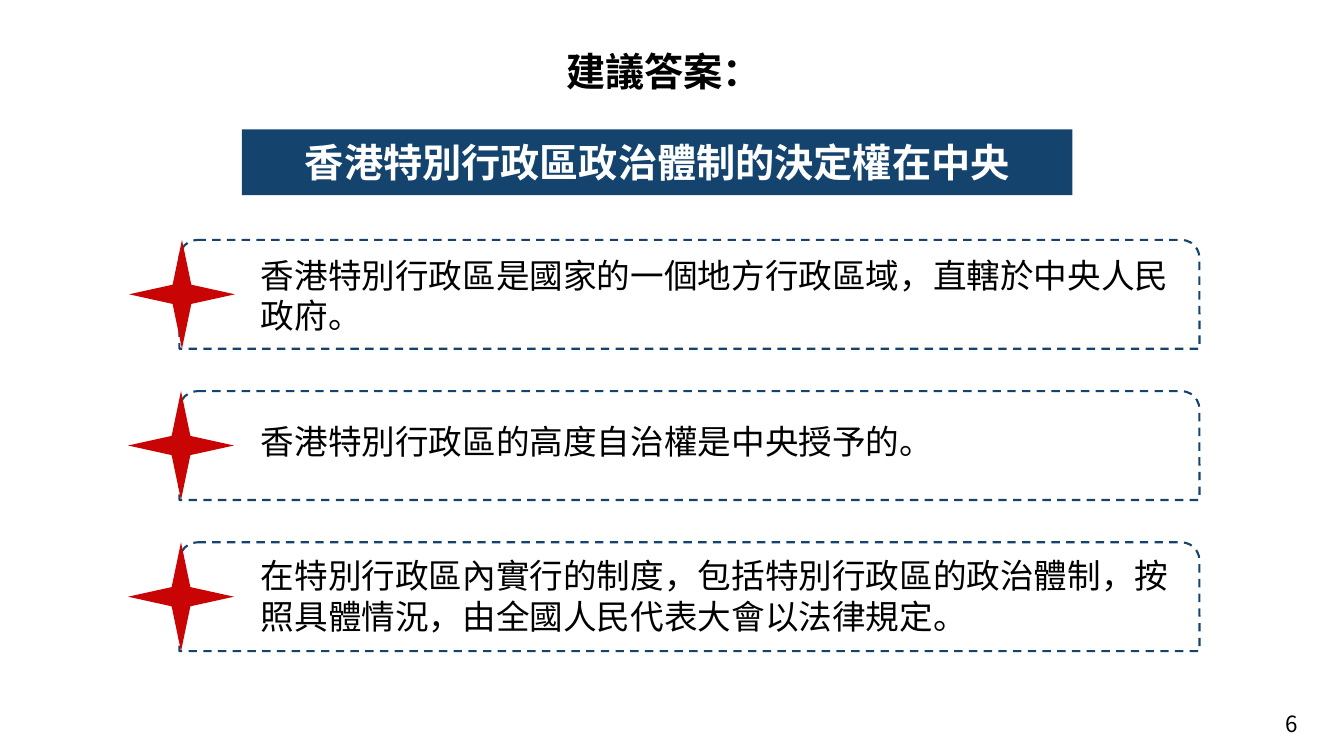
from dataclasses import dataclass

from lxml import etree
from pptx import Presentation
from pptx.dml.color import RGBColor
from pptx.enum.dml import MSO_LINE
from pptx.enum.shapes import MSO_SHAPE
from pptx.enum.text import MSO_ANCHOR, PP_ALIGN
from pptx.oxml.ns import qn
from pptx.util import Inches, Pt

FRAME, STAR = MSO_SHAPE.ROUND_2_SAME_RECTANGLE, MSO_SHAPE.STAR_4_POINT
DASH = MSO_LINE.DASH
MIDDLE, TOP = MSO_ANCHOR.MIDDLE, MSO_ANCHOR.TOP
LEFT, CENTER, RIGHT = PP_ALIGN.LEFT, PP_ALIGN.CENTER, PP_ALIGN.RIGHT

NAVY, RED, BLACK, WHITE = "14446E", "C80404", "000000", "FFFFFF"
BODY_FONT, NUMBER_FONT = "Roboto", "Noto Sans CJK SC"

WIDTH, HEIGHT = Inches(13.333), Inches(7.5)
FIRST_TOP, PITCH, CARD_HEIGHT = 31.73, 20, 14.4


@dataclass
class Area:
    """Position and size in percent of the slide."""
    x: float
    y: float
    w: float
    h: float

    def box(self) -> tuple[int, int, int, int]:
        return (int(WIDTH * self.x / 100), int(HEIGHT * self.y / 100),
                int(WIDTH * self.w / 100), int(HEIGHT * self.h / 100))


@dataclass
class Answer:
    text: str
    star_x: float
    text_area: Area


ANSWERS = [
    Answer("香港特別行政區是國家的一個地方行政區域，直轄於中央人民政府。",
           9.6, Area(18.68, 33.07, 69.6, 12.13)),
    Answer("香港特別行政區的高度自治權是中央授予的。",
           9.53, Area(18.68, 55.07, 70.73, 6.8)),
    Answer("在特別行政區內實行的制度，包括特別行政區的政治體制，"
           "按照具體情況，由全國人民代表大會以法律規定。",
           9.53, Area(18.68, 72.8, 70.73, 12.13)),
]


def rgb(value: str) -> RGBColor:
    return RGBColor.from_string(value)


def write(tf, text: str, size: float, color: str = BLACK, bold: bool = False,
          align=LEFT, anchor=TOP, font: str = BODY_FONT) -> None:
    tf.word_wrap = True
    tf.vertical_anchor = anchor
    p = tf.paragraphs[0]
    p.alignment = align
    r = p.add_run()
    r.text = text
    r.font.name, r.font.size, r.font.bold = font, Pt(size), bold
    r.font.color.rgb = rgb(color)
    # East Asian typeface follows the Latin one
    etree.SubElement(r.font._element, qn("a:ea"), typeface=font)


def add_text(s, area: Area, text: str, size: float, **style) -> None:
    write(s.shapes.add_textbox(*area.box()).text_frame, text, size, **style)


def add_title(s, area: Area, text: str) -> None:
    sp = s.shapes.title
    sp.left, sp.top, sp.width, sp.height = area.box()
    sp.fill.solid()
    sp.fill.fore_color.rgb = rgb(NAVY)
    tf = sp.text_frame
    tf.margin_left = tf.margin_right = Inches(0.27)
    tf.margin_top = tf.margin_bottom = Inches(0.03)
    write(tf, text, 28, color=WHITE, bold=True, align=CENTER, anchor=MIDDLE)


def add_card(s, answer: Answer, top: float) -> None:
    frame = s.shapes.add_shape(FRAME, *Area(13.35, top, 75.9, CARD_HEIGHT).box())
    frame.shadow.inherit = False
    frame.fill.background()
    frame.line.color.rgb = rgb(NAVY)
    frame.line.width = Pt(1.5)
    frame.line.dash_style = DASH

    star = s.shapes.add_shape(
        STAR, *Area(answer.star_x, top, 7.88, CARD_HEIGHT).box())
    star.shadow.inherit = False
    star.fill.solid()
    star.fill.fore_color.rgb = rgb(RED)
    star.line.fill.background()


def main() -> None:
    prs = Presentation()
    prs.slide_width, prs.slide_height = WIDTH, HEIGHT
    s = prs.slides.add_slide(prs.slide_layouts.get_by_name("Title Only"))

    # Page number and title bar
    add_text(s, Area(74.78, 93.07, 22.5, 5.33), "6", 16,
             align=RIGHT, anchor=MIDDLE, font=NUMBER_FONT)
    add_title(s, Area(18.0, 17.1, 61.8, 8.7), "香港特別行政區政治體制的決定權在中央")

    # Answer cards
    for i, answer in enumerate(ANSWERS):
        add_card(s, answer, FIRST_TOP + i * PITCH)
        add_text(s, answer.text_area, answer.text, 24)

    # Heading above the title bar
    add_text(s, Area(41.4, 5.6, 17.33, 7.6), "建議答案：", 28, bold=True)

    prs.save("out.pptx")


if __name__ == "__main__":
    main()
